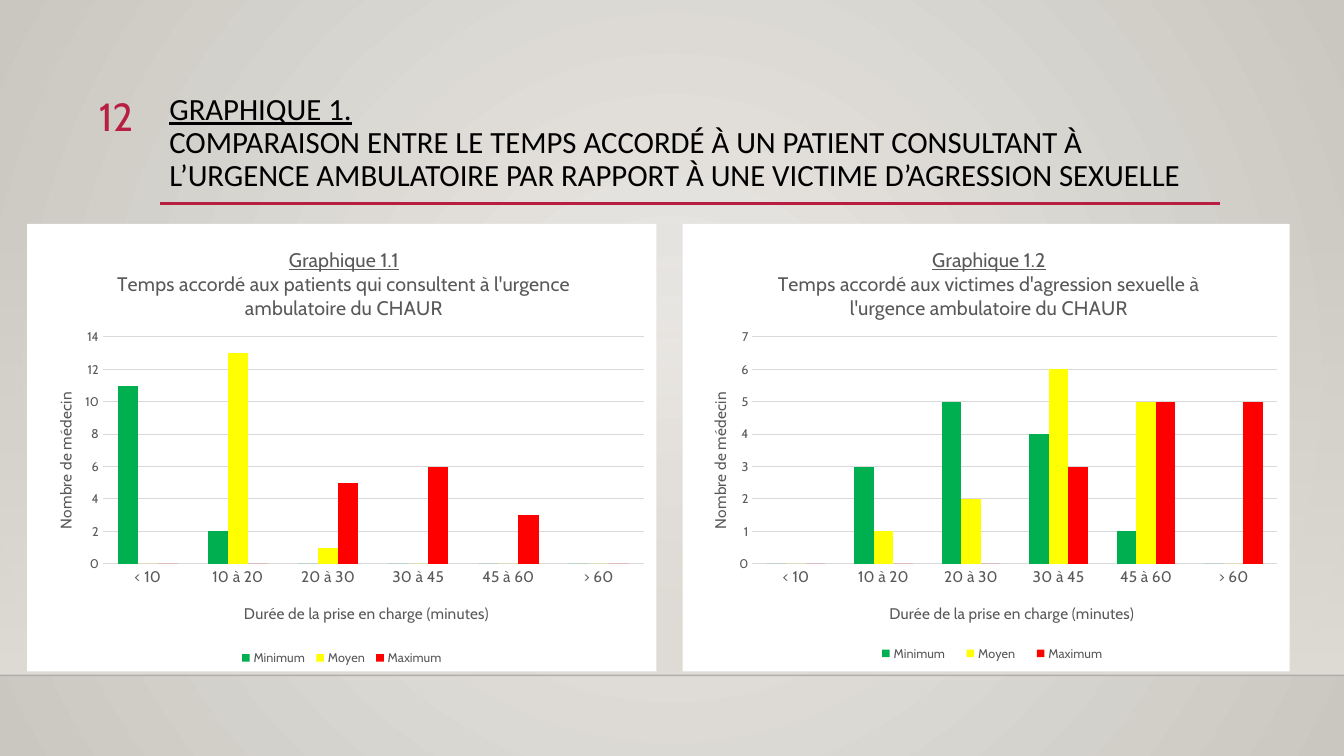
from lxml.etree import SubElement as Sub
from pptx import Presentation
from pptx.chart.data import CategoryChartData as Data
from pptx.dml.color import RGBColor as RGB
from pptx.enum.chart import XL_CHART_TYPE as Kind, XL_LEGEND_POSITION as Side, XL_TICK_MARK as Tick
from pptx.enum.shapes import MSO_CONNECTOR as Link, MSO_SHAPE as Form
from pptx.enum.text import MSO_ANCHOR as Anchor, MSO_AUTO_SIZE as Fit, PP_ALIGN as Align
from pptx.oxml import parse_xml
from pptx.oxml.ns import nsdecls, qn
from pptx.util import Inches, Pt

BLACK = RGB(0x00, 0x00, 0x00)
WHITE = RGB(0xFF, 0xFF, 0xFF)
GREY = RGB(0x59, 0x59, 0x59)
GRID = RGB(0xD9, 0xD9, 0xD9)
ROSE = RGB(0xB7, 0x1E, 0x42)
LIGHT = RGB(0xEC, 0xEA, 0xE7)
DARK = RGB(0xCA, 0xC7, 0xC1)
SAND = RGB(0xDF, 0xDB, 0xD5)
GREEN = RGB(0x00, 0xB0, 0x50)
YELLOW = RGB(0xFF, 0xFF, 0x00)
RED = RGB(0xFF, 0x00, 0x00)

CATS = ["< 10", "10 à 20", "20 à 30", "30 à 45", "45 à 60", "> 60"]
SERIES = [("Minimum", GREEN), ("Moyen", YELLOW), ("Maximum", RED)]


def write(frame, *lines, size, color, font="Cabin", align=None, under=False, split=True, space=None):
    """Write lines as paragraphs, or with line breaks if split is False."""
    para = frame.paragraphs[0]
    for i, line in enumerate(lines):
        if i and split:
            para = frame.add_paragraph()
        elif i:
            para.add_line_break()
        para.alignment = align
        para.line_spacing = space
        run = para.add_run()
        run.text = line
        style(run.font, size, color, font)
        run.font.underline = under and i == 0


def style(font, size, color, name="Cabin"):
    font.size, font.name, font.bold = Pt(size), name, False
    font.color.rgb = color


def fade(color, share):
    """Set the opacity, in percent, of a colour element."""
    Sub(color, qn("a:alpha")).set("val", str(share * 1000))


def place(node, index, target=None, **sizes):
    """Give a chart part a fixed layout, in shares of the chart."""
    for old in node.findall(qn("c:layout")):
        node.remove(old)
    layout = node.makeelement(qn("c:layout"))
    node.insert(index, layout)
    manual = Sub(layout, qn("c:manualLayout"))
    if target:
        Sub(manual, qn("c:layoutTarget")).set("val", target)
    for key in ("x", "y"):
        Sub(manual, qn(f"c:{key}Mode")).set("val", "edge")
    for key, size in sizes.items():
        Sub(manual, qn(f"c:{key}")).set("val", f"{size:.3f}")


class Page:
    def __init__(self, deck):
        self.slide = deck.slides.add_slide(deck.slide_layouts[5])
        self.shapes = self.slide.shapes

    def stops(self, fill, *colors):
        fill.gradient()
        for i, (stop, color) in enumerate(zip(fill.gradient_stops, colors)):
            stop.color.rgb = color
            stop.position = i

    def back(self):
        self.stops(self.slide.background.fill, LIGHT, DARK)
        grad = next(self.slide._element.iter(qn("a:gradFill")))
        grad.remove(grad.find(qn("a:lin")))
        ring = Sub(grad, qn("a:path"))
        ring.set("path", "circle")
        rect = Sub(ring, qn("a:fillToRect"))
        for side in "ltrb":
            rect.set(side, "50000")

    def floor(self, x, y, w, h):
        box = self.shapes.add_shape(Form.RECTANGLE, Inches(x), Inches(y), Inches(w), Inches(h))
        box.shadow.inherit = False
        box.line.fill.background()
        self.stops(box.fill, SAND, SAND)
        box.fill.gradient_angle = 270
        fade(next(box._element.iter(qn("a:srgbClr"))), 0)

    def line(self, x, y, end, color, width, share=100):
        rule = self.shapes.add_connector(Link.STRAIGHT, Inches(x), Inches(y), Inches(end), Inches(y))
        rule.line.color.rgb = color
        rule.line.width = Pt(width)
        if share < 100:
            fade(next(rule._element.iter(qn("a:srgbClr"))), share)
        Sub(rule._element.spPr, qn("a:effectLst"))

    def text(self, x, y, w, h, *lines, box=None, **look):
        box = box or self.shapes.add_textbox(0, 0, 0, 0)
        box.left, box.top, box.width, box.height = map(Inches, (x, y, w, h))
        frame = box.text_frame
        frame.word_wrap = True
        frame.auto_size = Fit.NONE
        frame.vertical_anchor = Anchor.TOP
        write(frame, *lines, **look)

    def chart(self, x, w, title, rows, top, step, plot, heads, key):
        y, h = 2.22, 4.44
        data = Data()
        data.categories = CATS
        for (name, _), row in zip(SERIES, rows):
            data.add_series(name, row)
        chart = self.shapes.add_chart(
            Kind.COLUMN_CLUSTERED, Inches(x), Inches(y), Inches(w), Inches(h), data).chart
        style(chart.font, 10, BLACK)
        area = parse_xml(f'<c:spPr {nsdecls("c", "a")}><a:solidFill><a:srgbClr val="{WHITE}"/>'
                         '</a:solidFill><a:ln><a:noFill/></a:ln></c:spPr>')
        chart._chartSpace.find(qn("c:chart")).addnext(area)

        # Columns
        bars = chart.plots[0]
        bars.gap_width, bars.overlap, bars.vary_by_categories = 150, 0, False
        for bar, (_, color) in zip(bars.series, SERIES):
            bar.format.fill.solid()
            bar.format.fill.fore_color.rgb = color
        place(chart._chartSpace.find(".//" + qn("c:plotArea")), 0, "inner", **plot)

        # Axes
        cat, val = chart.category_axis, chart.value_axis
        names = ["Durée de la prise en charge (minutes)", "Nombre de médecin"]
        for axis, name, size in zip((cat, val), names, (11, 9)):
            axis.major_tick_mark = axis.minor_tick_mark = Tick.NONE
            axis.format.line.fill.background()
            style(axis.tick_labels.font, size, GREY)
            write(axis.axis_title.text_frame, name, size=11, color=GREY)
        cat.has_major_gridlines = False
        val.minimum_scale, val.maximum_scale, val.major_unit = 0, top, step
        val.major_gridlines.format.line.color.rgb = GRID
        val.major_gridlines.format.line.width = Pt(0.75)
        turn = val.axis_title.text_frame._txBody.find(qn("a:bodyPr"))
        turn.set("rot", "-5400000")
        turn.set("vert", "horz")

        # Titles and legend
        write(chart.chart_title.text_frame, *title, size=14, color=GREY, under=True)
        for part, spot in zip((chart.chart_title, cat.axis_title, val.axis_title), heads):
            place(part._element, 1, x=spot[0], y=spot[1])
        chart.has_legend = True
        chart.legend.position = Side.BOTTOM
        chart.legend.include_in_layout = False
        style(chart.legend.font, 9, GREY)
        place(chart.legend._element, 1, **key)


def main():
    deck = Presentation()
    deck.slide_width, deck.slide_height = Inches(13.33), Inches(7.5)
    page = Page(deck)

    # Backdrop
    page.back()
    page.floor(0, 2.21, 13.33, 4.49)
    page.line(0, 6.7, 13.33, BLACK, 1, 20)
    page.line(1.59, 2.02, 12.1, ROSE, 2.5)

    # Heading and page number
    page.text(1.58, 0.88, 10.5, 1.16, "GRAPHIQUE 1.",
              "COMPARAISON ENTRE LE TEMPS ACCORDÉ À UN PATIENT CONSULTANT À "
              "L’URGENCE AMBULATOIRE PAR RAPPORT À UNE VICTIME D’AGRESSION SEXUELLE",
              box=page.shapes.title, size=22, color=BLACK, font="Calibri",
              align=Align.LEFT, under=True, split=False, space=0.9)
    page.text(0.53, 0.87, 0.89, 0.55, "12", size=28, color=ROSE, align=Align.RIGHT)

    # Charts
    page.chart(0.27, 6.24,
               ["Graphique 1.1",
                "Temps accordé aux patients qui consultent à l'urgence ambulatoire du CHAUR"],
               [(11, 2, 0, 0, 0, 0), (0, 13, 1, 0, 0, 0), (0, 0, 5, 6, 3, 0)], 14, 2,
               dict(x=0.12, y=0.253, w=0.86, h=0.507),
               [(0.138, 0.043), (0.34, 0.84), (0.04, 0.37)],
               dict(x=0.33, y=0.945, w=0.34, h=0.05))
    page.chart(6.77, 6.02,
               ["Graphique 1.2",
                "Temps accordé aux victimes d'agression sexuelle à l'urgence ambulatoire du CHAUR"],
               [(0, 3, 5, 4, 1, 0), (0, 1, 2, 6, 5, 0), (0, 0, 0, 3, 5, 5)], 7, 1,
               dict(x=0.115, y=0.253, w=0.865, h=0.507),
               [(0.152, 0.043), (0.336, 0.84), (0.04, 0.37)],
               dict(x=0.3, y=0.93, w=0.42, h=0.06))
    deck.save("out.pptx")


if __name__ == "__main__":
    main()
